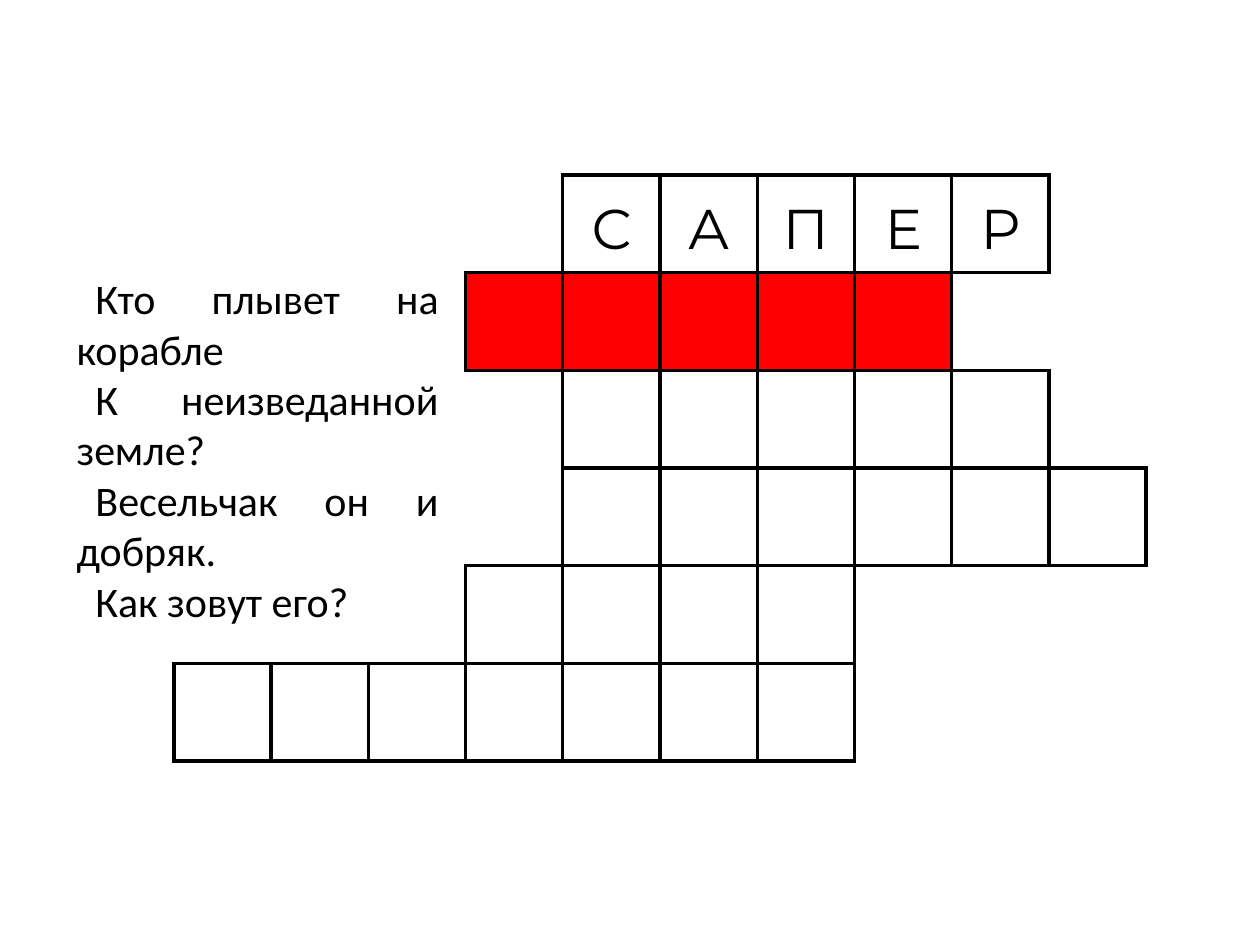
from lxml import etree
from pptx import Presentation, util as u
from pptx.dml.color import RGBColor
from pptx.enum import text as t
from pptx.oxml.ns import qn

COLS = 10
SPANS = [(4, 9), (3, 8), (4, 9), (4, 10), (3, 7), (0, 7)]
WORDS = {0: "САПЕР"}
ACTIVE = 1
NO_STYLE = "{2D5ABB26-0587-4C30-8999-92F81FD0307C}"
SIDES = {"a:lnL": (0, -1), "a:lnR": (0, 1), "a:lnT": (-1, 0), "a:lnB": (1, 0)}
RIDDLE = ["Кто плывет на корабле", "К неизведанной земле?",
          "Весельчак он и добряк.", "Как зовут его?"]


def paint(color, value):
    """Give a colour object a hex value."""
    color.rgb = RGBColor.from_string(value)


def style(para, face, size, align):
    """Set the font and alignment of a paragraph."""
    para.alignment = align
    para.font.name, para.font.size = face, u.Pt(size)
    paint(para.font.color, "000000")


def inside(row, col):
    """Tell whether a grid place belongs to a word."""
    return 0 <= row < len(SPANS) and SPANS[row][0] <= col < SPANS[row][1]


def edge(cell, row, col):
    """Line each side of a cell that touches a word and clear the others."""
    props = cell._tc.get_or_add_tcPr()
    for tag, (down, right) in SIDES.items():
        line = etree.SubElement(props, qn(tag), w=str(u.Pt(2.25)))
        if inside(row, col) or inside(row + down, col + right):
            fill = etree.SubElement(line, qn("a:solidFill"))
            etree.SubElement(fill, qn("a:srgbClr"), val="000000")
        else:
            etree.SubElement(line, qn("a:noFill"))


def add_grid(slide, left, top, width, height):
    """Draw the crossword in the given box."""
    rows = len(SPANS)
    box = map(u.Inches, (left, top, width, height))
    table = slide.shapes.add_table(rows, COLS, *box).table
    table.first_row = table.horz_banding = False
    table._tbl.tblPr.find(qn("a:tableStyleId")).text = NO_STYLE
    for row in range(rows):
        for col in range(COLS):
            cell = table.cell(row, col)
            edge(cell, row, col)
            if row == ACTIVE and inside(row, col):
                cell.fill.solid()
                paint(cell.fill.fore_color, "FF0000")
            else:
                cell.fill.background()
        for step, char in enumerate(WORDS.get(row, "")):
            add_char(table.cell(row, SPANS[row][0] + step), char)


def add_char(cell, char):
    """Write one letter in the middle of a cell."""
    cell.text = char
    cell.vertical_anchor = t.MSO_ANCHOR.MIDDLE
    cell.margin_left = cell.margin_right = u.Inches(0.07)
    cell.margin_top = cell.margin_bottom = 0
    para = cell.text_frame.paragraphs[0]
    para.line_spacing = 1.15
    style(para, "Montserrat", 32, t.PP_ALIGN.CENTER)


def add_clue(slide, left, top, width, height):
    """Write the riddle in the given box."""
    box = slide.shapes.add_textbox(*map(u.Inches, (left, top, width, height)))
    frame = box.text_frame
    frame.word_wrap = True
    frame.auto_size = t.MSO_AUTO_SIZE.SHAPE_TO_FIT_TEXT
    frame.vertical_anchor = t.MSO_ANCHOR.MIDDLE
    frame.text = "\n".join(RIDDLE)
    for para in frame.paragraphs:
        props = para._p.get_or_add_pPr()
        props.set("marL", "0")
        props.set("indent", str(u.Inches(0.15)))
        style(para, "Calibri", 24, t.PP_ALIGN.JUSTIFY)


def main():
    """Build and save the crossword slide."""
    deck = Presentation()
    deck.slide_width, deck.slide_height = u.Inches(10), u.Inches(7.5)
    slide = deck.slides.add_slide(deck.slide_layouts[6])
    add_grid(slide, 1.38, 1.39, 7.72, 4.65)
    add_clue(slide, 0.51, 2.1, 3.07, 2.93)
    deck.save("out.pptx")


if __name__ == "__main__":
    main()
